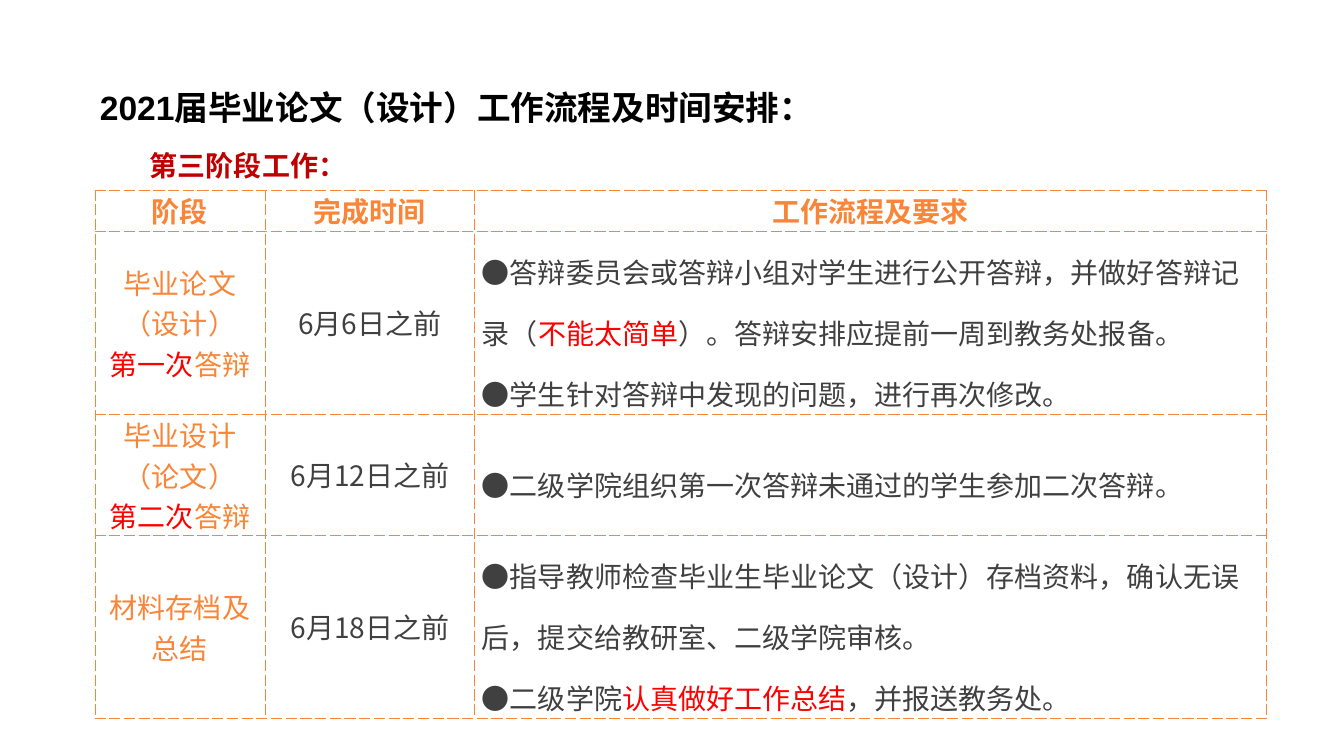
import pptx
import pptx.dml.color
import pptx.enum.lang
import pptx.enum.text
import pptx.oxml.ns
import pptx.util
import lxml.etree

SCALE = 914400 / 100.8
COLORS = {
    "black": "000000",
    "crimson": "C00000",
    "orange": "F98638",
    "red": "FF0000",
    "gray": "404040",
    "white": "FFFFFF",
}
TABLE_FONT = "Noto Sans CJK SC"
ALIGN = pptx.enum.text.PP_ALIGN
ANCHOR = pptx.enum.text.MSO_ANCHOR


def emu(px):
    return pptx.util.Emu(round(px * SCALE))


def add_span(para, text, color, name, size, bold):
    span = para.add_run()
    span.text = text
    formats = {
        "name": name,
        "size": pptx.util.Pt(size),
        "bold": bold,
        "language_id": pptx.enum.lang.MSO_LANGUAGE_ID.SIMPLIFIED_CHINESE,
    }
    for key, value in formats.items():
        setattr(span.font, key, value)
    span.font.color.rgb = pptx.dml.color.RGBColor.from_string(COLORS[color])
    east_asian = lxml.etree.SubElement(span.font._element, pptx.oxml.ns.qn("a:ea"))
    east_asian.set("typeface", name)


deck = pptx.Presentation()
deck.slide_width = emu(1344)
deck.slide_height = emu(756)
page = deck.slides.add_slide(deck.slide_layouts[6])

heading_box = page.shapes.add_textbox(emu(90), emu(70), emu(1165), emu(115))
heading_box.text_frame.word_wrap = True
headings = [
    ("2021届毕业论文（设计）工作流程及时间安排：", "black", 24, 0),
    ("第三阶段工作：", "crimson", 20, 50),
]
for index, (text, color, size, indent) in enumerate(headings):
    frame = heading_box.text_frame
    para = frame.add_paragraph() if index else frame.paragraphs[0]
    para.line_spacing = 1.3
    para.space_after = pptx.util.Pt(8)
    para._p.get_or_add_pPr().set("indent", str(emu(indent)))
    add_span(para, text, color, "Arial", size, True)

column_widths = [170, 210, 792]
row_heights = [41, 183, 121, 183]
rows = [
    [
        [[("阶段", "orange")]],
        [[("完成时间", "orange")]],
        [[("工作流程及要求", "orange")]],
    ],
    [
        [[("毕业论文（设计）", "orange")], [("第一次", "red"), ("答辩", "orange")]],
        [[("6月6日之前", "gray")]],
        [
            [
                ("●答辩委员会或答辩小组对学生进行公开答辩，并做好答辩记录（", "gray"),
                ("不能太简单", "red"),
                ("）。答辩安排应提前一周到教务处报备。", "gray"),
            ],
            [("●学生针对答辩中发现的问题，进行再次修改。", "gray")],
        ],
    ],
    [
        [[("毕业设计（论文）", "orange")], [("第二次", "red"), ("答辩", "orange")]],
        [[("6月12日之前", "gray")]],
        [[("●二级学院组织第一次答辩未通过的学生参加二次答辩。", "gray")]],
    ],
    [
        [[("材料存档及总结", "orange")]],
        [[("6月18日之前", "gray")]],
        [
            [("●指导教师检查毕业生毕业论文（设计）存档资料，确认无误后，提交给教研室、二级学院审核。", "gray")],
            [
                ("●二级学院", "gray"),
                ("认真做好工作总结", "red"),
                ("，并报送教务处。", "gray"),
            ],
        ],
    ],
]

schedule = page.shapes.add_table(
    len(rows), len(column_widths), emu(95), emu(190),
    emu(sum(column_widths)), emu(sum(row_heights)),
).table
schedule.first_row = False
schedule.horz_banding = False
for column, width in zip(schedule.columns, column_widths):
    column.width = emu(width)
for row, height in zip(schedule.rows, row_heights):
    row.height = emu(height)

for row_index, row in enumerate(rows):
    for column_index, paragraphs in enumerate(row):
        cell = schedule.cell(row_index, column_index)
        header = row_index == 0
        details = column_index == 2 and not header
        formats = {
            "margin_left": emu(7),
            "margin_right": emu(7),
            "margin_top": 0,
            "margin_bottom": 0,
            "vertical_anchor": ANCHOR.TOP if header else ANCHOR.MIDDLE,
        }
        for key, value in formats.items():
            setattr(cell, key, value)
        properties = cell._tc.get_or_add_tcPr()
        for side in ("lnL", "lnR", "lnT", "lnB"):
            line = lxml.etree.SubElement(properties, pptx.oxml.ns.qn("a:" + side))
            line.set("w", str(pptx.util.Pt(0.75)))
            fill = lxml.etree.SubElement(line, pptx.oxml.ns.qn("a:solidFill"))
            color = lxml.etree.SubElement(fill, pptx.oxml.ns.qn("a:srgbClr"))
            color.set("val", COLORS["orange"])
            dash = lxml.etree.SubElement(line, pptx.oxml.ns.qn("a:prstDash"))
            dash.set("val", "sysDash")
        cell.fill.solid()
        cell.fill.fore_color.rgb = pptx.dml.color.RGBColor.from_string(COLORS["white"])
        for index, spans in enumerate(paragraphs):
            frame = cell.text_frame
            para = frame.add_paragraph() if index else frame.paragraphs[0]
            para.alignment = ALIGN.LEFT if details else ALIGN.CENTER
            para.line_spacing = 1.5 if details else 1.0
            for text, color in spans:
                add_span(para, text, color, TABLE_FONT, 20, header)

deck.save("out.pptx")
